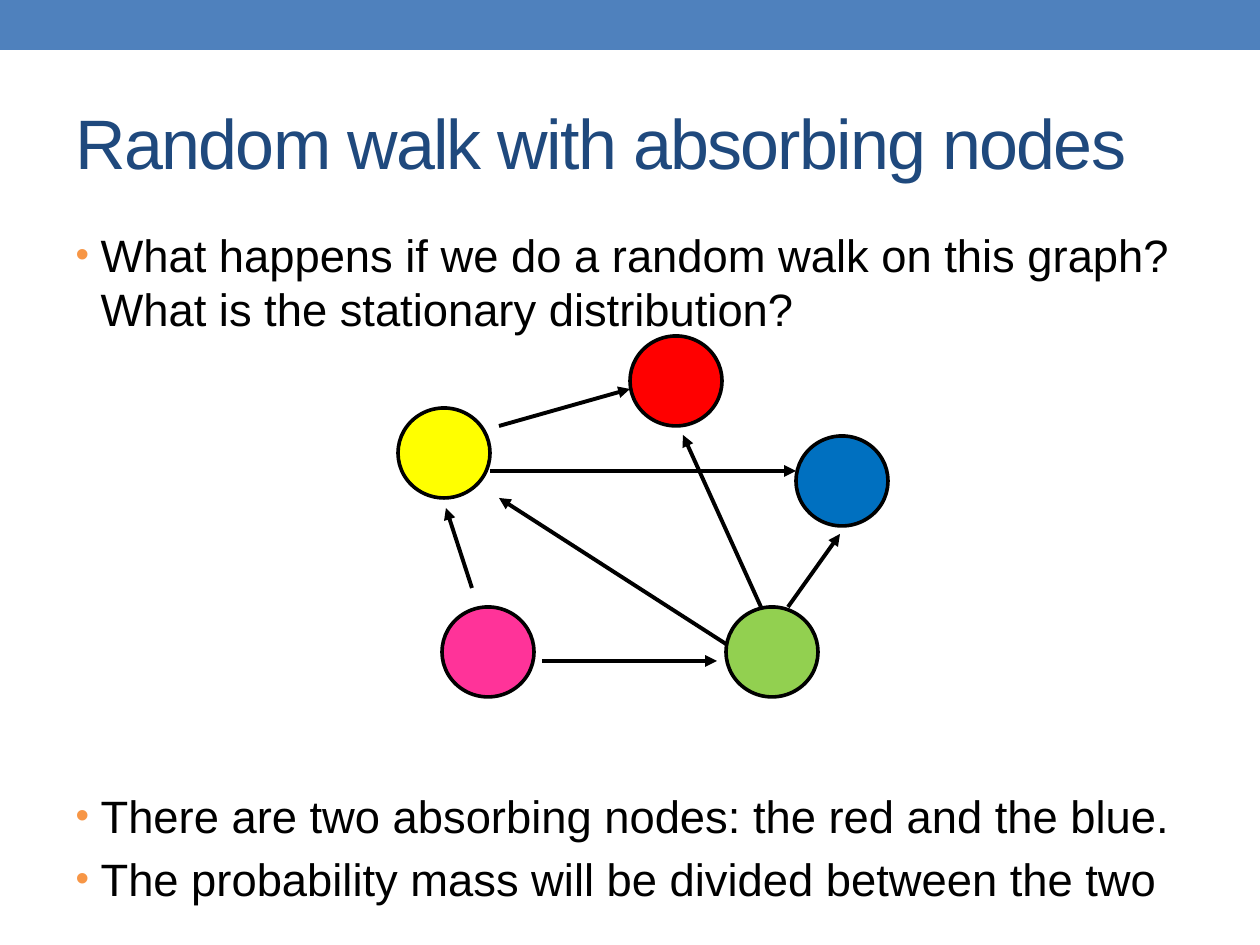
"""Build a slide on a random walk over a graph with two absorbing nodes."""
from lxml import etree
from pptx import Presentation
from pptx import util as u
from pptx.dml.color import RGBColor
from pptx.enum import shapes, text
from pptx.oxml.ns import qn

PX = 7257
SIZE = 1260, 945
TITLE = "Random walk with absorbing nodes"
POINTS = [
    ("What happens if we do a random walk on this graph? "
     "What is the stationary distribution?", 5),
    ("There are two absorbing nodes: the red and the blue.", 259),
    ("The probability mass will be divided between the two", 5),
]
NODE = 92, 90
NODES = [
    (630, 336, "FF0000"),
    (796, 436, "0070C0"),
    (726, 607, "92D050"),
    (442, 607, "FF3399"),
    (398, 408, "FFFF00"),
]
EDGES = [
    (542, 661, 717, 661),
    (472, 588, 446, 508),
    (499, 426, 630, 389),
    (490, 471, 796, 471),
    (761, 607, 683, 435),
    (788, 607, 840, 534),
    (726, 644, 499, 498),
]


def px(*vals):
    return [u.Emu(v * PX) for v in vals]


def rgb(code):
    return RGBColor.from_string(code)


def put(obj, **vals):
    for key, val in vals.items():
        setattr(obj, key, val)


def sub(node, tag, **vals):
    return etree.SubElement(node, qn(tag), vals)


def place(shape, box):
    put(shape, **dict(zip(("left", "top", "width", "height"), px(*box))))


def style(para, size, color):
    put(para.font, name="Arial", size=u.Pt(size))
    para.font.color.rgb = rgb(color)


def shape(slide, kind, box, fill, line=None):
    item = slide.shapes.add_shape(kind, *px(*box))
    item.shadow.inherit = False
    item.fill.solid()
    item.fill.fore_color.rgb = rgb(fill)
    if line:
        item.line.color.rgb = rgb("000000")
        item.line.width = u.Pt(line)
    else:
        item.line.fill.background()


def arrow(slide, ends):
    item = slide.shapes.add_connector(shapes.MSO_CONNECTOR.STRAIGHT, *px(*ends))
    item.line.color.rgb = rgb("000000")
    item.line.width = u.Pt(2.25)
    sub(item.line._get_or_add_ln(), "a:tailEnd", type="triangle")
    sub(item._element.spPr, "a:effectLst")


def head(slide):
    item = slide.shapes.title
    place(item, (63, 73, 1134, 136))
    frame = item.text_frame
    put(frame, text=TITLE, word_wrap=True,
        vertical_anchor=text.MSO_ANCHOR.MIDDLE)
    para = frame.paragraphs[0]
    para.alignment = text.PP_ALIGN.LEFT
    style(para, 40, "1F497D")
    run = para.runs[0]
    put(run.font, name="Arial", size=u.Pt(40))
    run.font._element.set("spc", "-100")


def body(slide):
    item = slide.placeholders[1]
    place(item, (63, 221, 1134, 693))
    frame = item.text_frame
    frame.text = "\n".join(words for words, _ in POINTS)
    put(frame, word_wrap=True, auto_size=text.MSO_AUTO_SIZE.NONE)
    for para, (_, gap) in zip(frame.paragraphs, POINTS):
        put(para, space_before=u.Pt(gap), line_spacing=u.Pt(30.9))
        style(para, 25.9, "000000")
        run = para.runs[0]
        put(run.font, name="Arial", size=u.Pt(25.9))
        props = para._p.get_or_add_pPr()
        props.set("marL", str(25 * PX))
        props.set("indent", str(-25 * PX))
        tint = etree.Element(qn("a:buClr"))
        sub(tint, "a:srgbClr", val="F79646")
        size = etree.Element(qn("a:buSzPct"), val="85000")
        face = etree.Element(qn("a:buFont"), typeface="Arial")
        mark = etree.Element(qn("a:buChar"), char="•")
        spot = props.index(props.find(qn("a:defRPr")))
        props[spot:spot] = [tint, size, face, mark]


def main():
    deck = Presentation()
    deck.slide_width, deck.slide_height = px(*SIZE)
    slide = deck.slides.add_slide(deck.slide_layouts[1])
    shape(slide, shapes.MSO_SHAPE.RECTANGLE, (0, 0, SIZE[0], 50), "4F81BD")
    head(slide)
    body(slide)
    for ends in EDGES:
        arrow(slide, ends)
    for left, top, fill in NODES:
        shape(slide, shapes.MSO_SHAPE.OVAL, (left, top, *NODE), fill, 2.08)
    deck.save("out.pptx")


if __name__ == "__main__":
    main()
